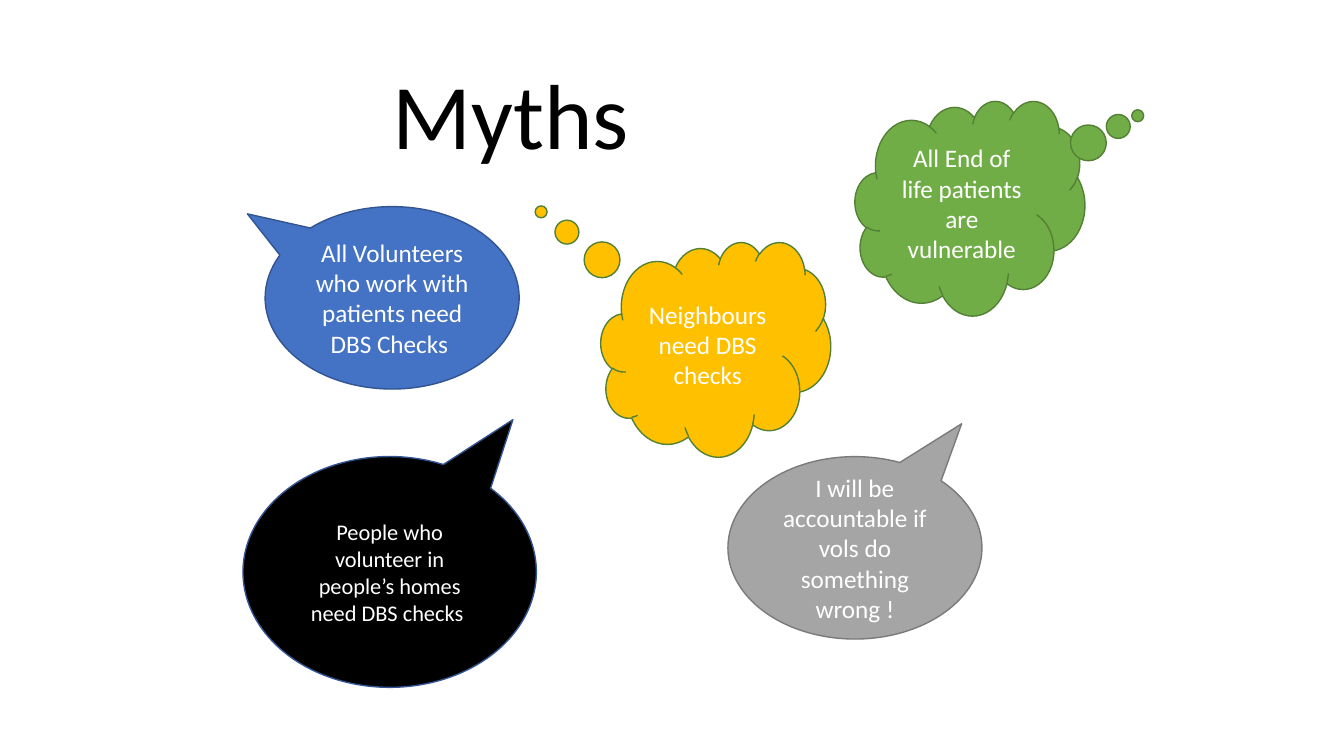
import dataclasses

import pptx
import pptx.dml.color
import pptx.enum.shapes
import pptx.enum.text
import pptx.util

SHAPES = pptx.enum.shapes.MSO_SHAPE
ANCHORS = pptx.enum.text.MSO_ANCHOR


@dataclasses.dataclass(frozen=True)
class Theme:
    font: str = "Calibri"
    blue: str = "4472C4"
    navy: str = "325491"
    gold: str = "FFC000"
    green: str = "70AD47"
    moss: str = "538035"
    grey: str = "A5A5A5"
    slate: str = "7A7A7A"
    black: str = "000000"
    white: str = "FFFFFF"
    title: int = 66
    body: int = 18
    small: int = 16
    outline: int = 1


def colour(value):
    return pptx.dml.color.RGBColor.from_string(value)


def apply(target, values):
    for name, value in values.items():
        setattr(target, name, value)


class MythsSlide:
    def __init__(self, deck, theme):
        self.deck = deck
        self.theme = theme
        self.page = deck.slides.add_slide(deck.slide_layouts[6])

    def place(self, left, top, width, height):
        across, down = self.deck.slide_width, self.deck.slide_height
        shares = ((left, across), (top, down), (width, across), (height, down))
        return [round(share * length / 100) for share, length in shares]

    def add_words(self, box, spans, ink, anchor):
        apply(box.text_frame, {"word_wrap": True, "vertical_anchor": anchor})
        para = box.text_frame.paragraphs[0]
        para.alignment = pptx.enum.text.PP_ALIGN.CENTER
        for text, size in spans:
            span = para.add_run()
            span.text = text
            apply(span.font, {"name": self.theme.font, "size": pptx.util.Pt(size)})
            span.font.color.rgb = colour(ink)

    def title(self, area, spans):
        box = self.page.shapes.add_textbox(*self.place(*area))
        self.add_words(box, spans, self.theme.black, ANCHORS.TOP)
        box.text_frame.auto_size = pptx.enum.text.MSO_AUTO_SIZE.SHAPE_TO_FIT_TEXT

    def bubble(self, kind, area, tail, fill, line, text, size):
        box = self.page.shapes.add_shape(kind, *self.place(*area))
        box.shadow.inherit = False
        for index, offset in enumerate(tail):
            box.adjustments[index] = offset
        box.fill.solid()
        box.fill.fore_color.rgb = colour(fill)
        box.line.color.rgb = colour(line)
        box.line.width = pptx.util.Pt(self.theme.outline)
        self.add_words(box, [(text, size)], self.theme.white, ANCHORS.MIDDLE)


def main():
    deck = pptx.Presentation()
    apply(deck, {"slide_width": pptx.util.Inches(13.33), "slide_height": pptx.util.Inches(7.5)})
    theme = Theme()
    slide = MythsSlide(deck, theme)
    speech, thought = SHAPES.OVAL_CALLOUT, SHAPES.CLOUD_CALLOUT
    speech_size, thought_size = (18.9, 24.13), (17.1, 28.4)
    lower_row = 60.4

    myths = [
        (speech, (54.16, lower_row, *speech_size), (0.42, -0.68), theme.grey, theme.slate,
         "I will be accountable if vols do something wrong !", theme.body),
        (thought, (44.71, 32, *thought_size), (-0.76, -0.64), theme.gold, theme.moss,
         "Neighbours need DBS checks", theme.body),
        (speech, (18.08, lower_row, 21.83, 30.53), (0.42, -0.66), theme.black, theme.navy,
         "People who volunteer in people’s homes need DBS checks ", theme.small),
        (thought, (63.62, 13.33, *thought_size), (0.73, -0.43), theme.green, theme.moss,
         "All End of life patients are vulnerable", theme.body),
        (speech, (19.73, 27.33, *speech_size), (-0.57, -0.46), theme.blue, theme.navy,
         "All Volunteers who work with patients need DBS Checks ", theme.body),
    ]
    for myth in myths:
        slide.bubble(*myth)
    slide.title((17.55, 6.93, 41.34, 16.13), [("Myths", theme.title), (" ", theme.body)])
    deck.save("out.pptx")


if __name__ == "__main__":
    main()
